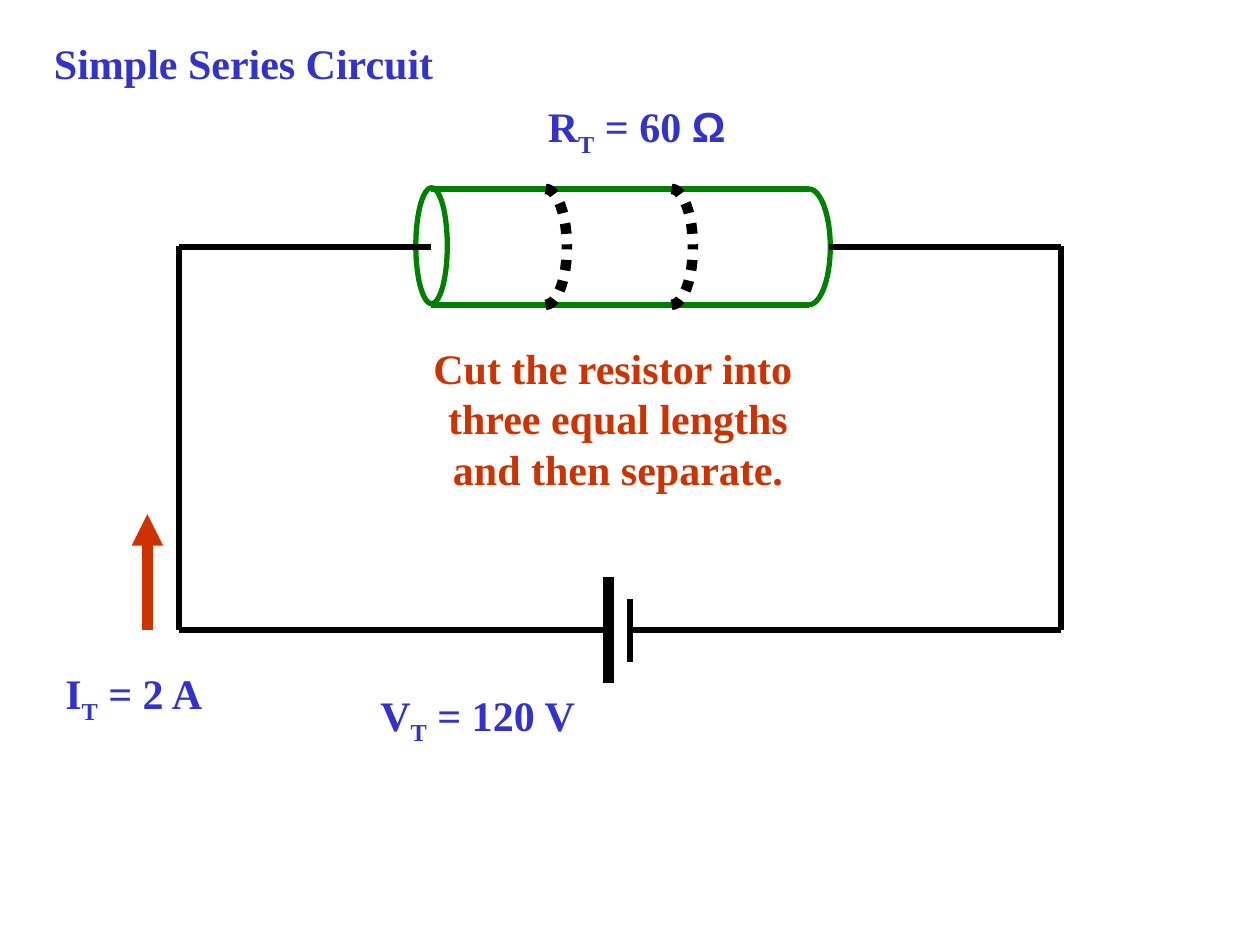
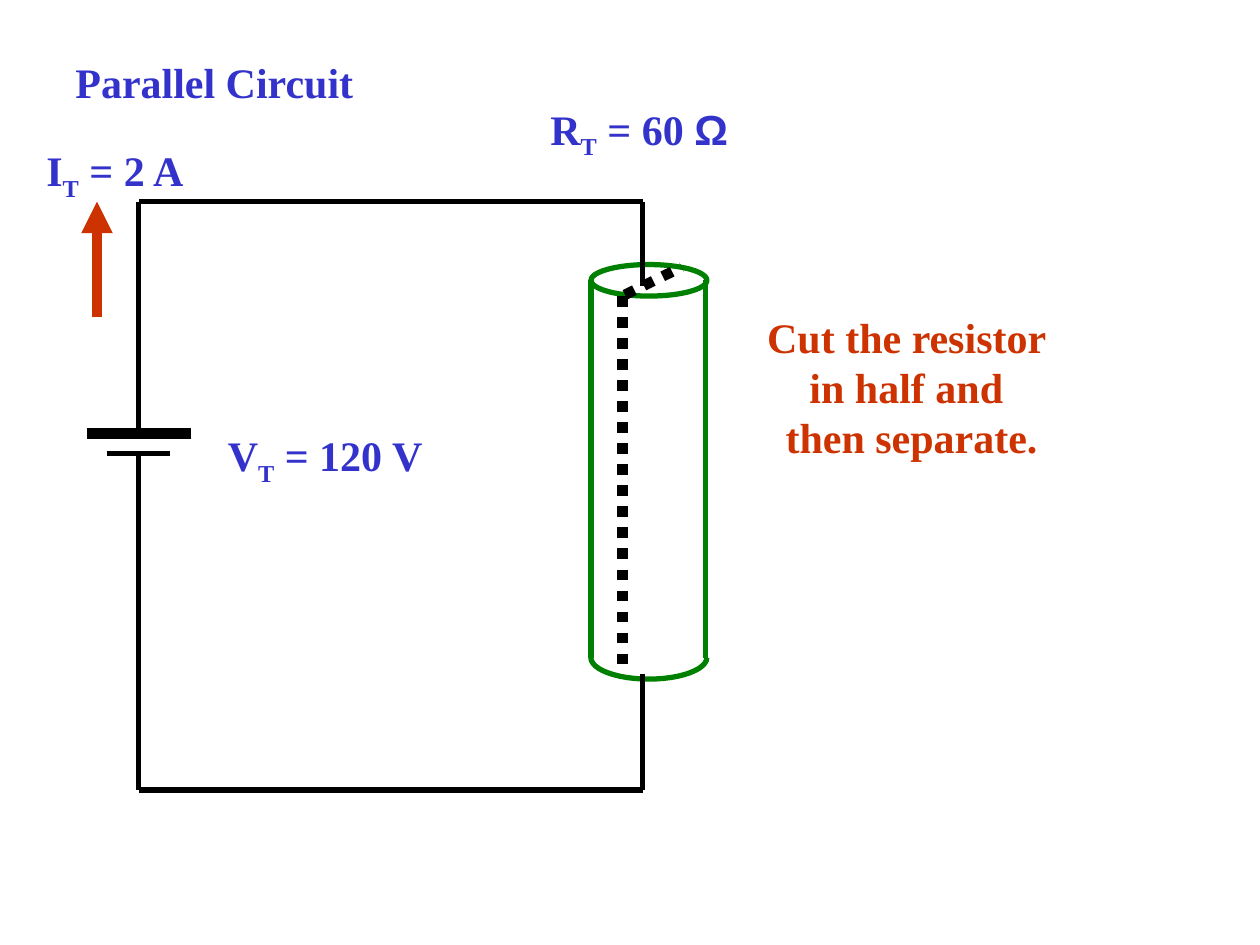
from dataclasses import dataclass
from math import cos, radians, sin

from lxml.etree import SubElement
from pptx import Presentation
from pptx.dml.color import RGBColor
from pptx.enum.dml import MSO_LINE
from pptx.enum.shapes import MSO_CONNECTOR, MSO_SHAPE
from pptx.enum.text import MSO_AUTO_SIZE, PP_ALIGN
from pptx.oxml.ns import qn
from pptx.util import Pt

PX = 9144  # 100 px to the inch


@dataclass(frozen=True)
class Theme:
    label: RGBColor = RGBColor(0x33, 0x33, 0xCC)
    accent: RGBColor = RGBColor(0xCC, 0x33, 0x00)
    resistor: RGBColor = RGBColor(0x00, 0x80, 0x00)
    wire: RGBColor = RGBColor(0, 0, 0)
    font: str = "Times New Roman"
    symbol_font: str = "Arial"
    size: int = 24
    thin: int = 3
    thick: int = 6


T = Theme()


def emu(*lengths):
    return [round(v * PX) for v in lengths]


def stroke(line, color, width, dotted=False):
    line.color.rgb = color
    line.width = Pt(width)
    if dotted:
        line.dash_style = MSO_LINE.ROUND_DOT


def text(shapes, box, paragraphs, color=T.label, align=None, wrap=True):
    """Each paragraph is a list of (text, style); style is "", "sub" or "symbol"."""
    tf = shapes.add_textbox(*emu(*box)).text_frame
    tf.word_wrap = wrap
    tf.auto_size = MSO_AUTO_SIZE.SHAPE_TO_FIT_TEXT
    for i, runs in enumerate(paragraphs):
        p = tf.add_paragraph() if i else tf.paragraphs[0]
        p.alignment = align
        for words, style in runs:
            r = p.add_run()
            r.text = words
            r.font.name = T.symbol_font if style == "symbol" else T.font
            r.font.size = Pt(T.size)
            r.font.bold = True
            r.font.color.rgb = color
            if style == "sub":
                r.font._element.set("baseline", "-25000")


def title(shapes, box, words):
    text(shapes, box, [[(words, "")]], wrap=False)


def instruction(shapes, box, lines):
    text(shapes, box, [[(words, "")] for words in lines],
         color=T.accent, align=PP_ALIGN.CENTER, wrap=False)


def total(shapes, x, y, width, letter, value, unit, unit_style=""):
    """Label for a total quantity, such as V with subscript T."""
    text(shapes, (x, y, width, 50),
         [[(letter, ""), ("T", "sub"), (f" = {value} ", ""), (unit, unit_style)]])


def line(shapes, start, end, color=T.wire, width=T.thin, dotted=False, arrow=False):
    s = shapes.add_connector(MSO_CONNECTOR.STRAIGHT, *emu(*start, *end))
    stroke(s.line, color, width, dotted)
    if arrow:
        SubElement(s.line._get_or_add_ln(), qn("a:headEnd"), type="triangle")
    SubElement(s._element.spPr, qn("a:effectLst"))


def wires(shapes, *segments):
    for start, end in segments:
        line(shapes, start, end)


def half_arc(shapes, center, radii, middle, color=T.resistor, width=T.thin, dotted=False):
    """Two quarter arcs that meet at the middle angle, in degrees clockwise from right."""
    def point(angle):
        return emu(*(c + r * f(radians(angle)) for c, r, f in zip(center, radii, (cos, sin))))

    for turn in (-90, 90):
        points = [point(middle + turn * (1 - i / 12)) for i in range(13)]
        fb = shapes.build_freeform(*points[0])
        fb.add_line_segments(points[1:], close=False)
        s = fb.convert_to_shape()
        s.fill.background()
        stroke(s.line, color, width, dotted)
        s.shadow.inherit = False


def resistor(shapes, rim, sides, center, radii, middle):
    """Cylinder outline: open rim, two sides and a rounded far end."""
    group = shapes.add_group_shape().shapes
    s = group.add_shape(MSO_SHAPE.OVAL, *emu(*rim))
    s.fill.background()
    s.shadow.inherit = False
    stroke(s.line, T.resistor, T.thin)
    for start, end in sides:
        line(group, start, end, color=T.resistor)
    half_arc(group, center, radii, middle)


def current(shapes, label_x, label_y, arrow_x, arrow_top):
    group = shapes.add_group_shape().shapes
    total(group, label_x, label_y, 176, "I", 2, "A")
    line(group, (arrow_x, arrow_top), (arrow_x, arrow_top + 92),
         color=T.accent, width=T.thick, arrow=True)


def series_slide(shapes):
    left, right, top, bottom = 142, 842, 196, 500
    long_plate, short_plate = 483, 500
    resistor(shapes, (330, 149, 25, 92), [((342, y), (642, y)) for y in (150, 242)],
             center=(642, top), radii=(17, 46), middle=0)
    wires(shapes,
          ((342, top), (left, top)), ((658, top), (right, top)),
          ((left, top - 1), (left, bottom)), ((right, top - 1), (right, bottom)),
          ((left, bottom), (long_plate, bottom)), ((short_plate, bottom), (right, bottom)))
    line(shapes, (long_plate, 458), (long_plate, 542), width=T.thick)
    line(shapes, (short_plate, 475), (short_plate, 525))
    total(shapes, 425, 75, 215, "R", 60, "Ω", "symbol")
    total(shapes, 292, 542, 192, "V", 120, "V")
    current(shapes, 42, 525, 117, 408)
    for cut in (533, 433):
        half_arc(shapes.add_group_shape().shapes, (cut, top), (17, 46), 0,
                 color=T.wire, width=T.thick, dotted=True)
    title(shapes, (33, 25, 322, 50), "Simple Series Circuit")
    instruction(shapes, (333, 267, 315, 130),
                ["Cut the resistor into ", "three equal lengths", "and then separate."])


def parallel_slide(shapes):
    left, right, top, bottom = 110, 510, 160, 627
    long_plate, short_plate = 344, 360
    resistor(shapes, (469, 210, 92, 25), [((x, 222), (x, 522)) for x in (560, 469)],
             center=(515, 522), radii=(46, 17), middle=90)
    wires(shapes,
          ((right, top), (left, top)), ((right, 535), (right, bottom)),
          ((left, bottom), (right, bottom)), ((left, short_plate), (left, bottom)),
          ((left, top), (left, long_plate)), ((right, top), (right, 227)))
    line(shapes, (152, long_plate), (69, long_plate), width=T.thick)
    line(shapes, (135, short_plate), (85, short_plate))
    total(shapes, 427, 77, 215, "R", 60, "Ω", "symbol")
    total(shapes, 171, 336, 183, "V", 120, "V")
    current(shapes, 27, 110, 77, 160)
    title(shapes, (50, 40, 241, 50), "Parallel Circuit")
    instruction(shapes, (598, 242, 251, 130),
                ["Cut the resistor ", "in half and ", "then separate."])
    cut = shapes.add_group_shape().shapes
    for start, end in (((496, 234), (541, 212)), ((494, 235), (494, 535))):
        line(cut, start, end, width=T.thick, dotted=True)


def main():
    prs = Presentation()
    prs.slide_width, prs.slide_height = emu(1000, 750)
    for build in (series_slide, parallel_slide):
        build(prs.slides.add_slide(prs.slide_layouts[6]).shapes)
    prs.save("out.pptx")


if __name__ == "__main__":
    main()
